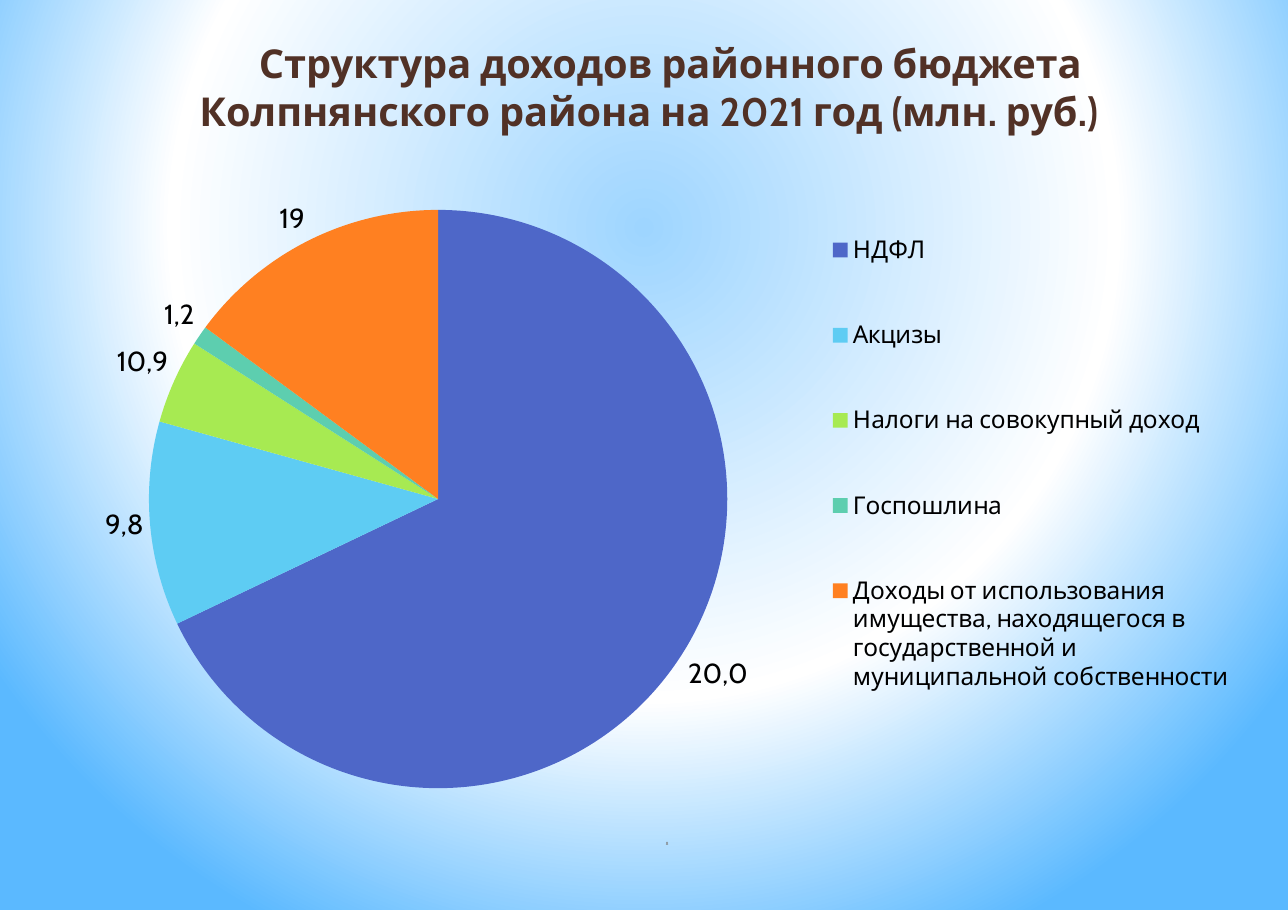
from dataclasses import dataclass

from pptx import Presentation
from pptx.chart.data import CategoryChartData
from pptx.dml.color import RGBColor
from pptx.enum.chart import XL_CHART_TYPE, XL_LABEL_POSITION, XL_LEGEND_POSITION
from pptx.enum.text import MSO_ANCHOR, MSO_AUTO_SIZE, PP_ALIGN
from pptx.oxml import parse_xml
from pptx.oxml.ns import nsdecls, qn
from pptx.util import Pt

PIE = XL_CHART_TYPE.PIE
OUTSIDE_END = XL_LABEL_POSITION.OUTSIDE_END
LEGEND_RIGHT = XL_LEGEND_POSITION.RIGHT
TOP, MIDDLE = MSO_ANCHOR.TOP, MSO_ANCHOR.MIDDLE
GROW = MSO_AUTO_SIZE.SHAPE_TO_FIT_TEXT
CENTER = PP_ALIGN.CENTER

COLORS = {
    "title": "513126",
    "page_number": "808080",
    "label": "000000",
    "sky": "9ED5FF",
    "glow": "FFFFFF",
    "edge": "5BB9FF",
    "income_tax": "4E67C8",
    "excise": "5ECCF3",
    "total_income": "A7EA52",
    "duty": "5DCEAF",
    "property": "FF8021",
}
BACKGROUND_STOPS = {"sky": 0, "glow": 60, "edge": 100}
CHART_BOX = (33.84, 111.6, 779.76, 414)
PIE_BOX = (63.5, 25.6, 378, 378)
LEGEND_BOX = (503.5, 5.5, 273, 371.5)


@dataclass(frozen=True)
class Caption:
    text: str
    box: tuple[float, float, float, float]
    size: float
    font: str
    color: str
    anchor: MSO_ANCHOR
    margin: float
    indent: float
    spacing: int


@dataclass(frozen=True)
class Income:
    name: str
    value: float
    label: str
    color: str


CAPTIONS = [
    Caption("Структура доходов районного бюджета Колпнянского района на 2021 год (млн. руб.)",
            (54.72, 25.4, 738, 63.36), 26, "Cabin", "title", TOP, 0.72, 28.08, -5),
    Caption("8", (350.64, 549.36, 168.48, 3.6), 3, "Arial", "page_number", MIDDLE, 2.16, 0, 0),
]
INCOMES = [
    Income("НДФЛ", 82.1, "20,0", "income_tax"),
    Income("Акцизы", 13.8, "9,8", "excise"),
    Income("Налоги на совокупный доход", 5.7, "10,9", "total_income"),
    Income("Госпошлина", 1.3, "1,2", "duty"),
    Income("Доходы от использования имущества, находящегося в "
           "государственной и муниципальной собственности", 18, "19", "property"),
]


def rgb(color: str) -> RGBColor:
    return RGBColor.from_string(COLORS[color])


def set_format(target, values: dict) -> None:
    for attribute, value in values.items():
        setattr(target, attribute, value)


def set_font(font, size: float, name: str, color: str, bold: bool = False) -> None:
    set_format(font, {"size": Pt(size), "name": name, "bold": bold})
    font.color.rgb = rgb(color)


def paint_background(slide) -> None:
    stops = "".join(
        f'<a:gs pos="{position * 1000}"><a:srgbClr val="{COLORS[color]}"/></a:gs>'
        for color, position in BACKGROUND_STOPS.items())
    background = parse_xml(
        f'<p:bg {nsdecls("p", "a")}><p:bgPr><a:gradFill rotWithShape="1">'
        f'<a:gsLst>{stops}</a:gsLst><a:path path="circle">'
        '<a:fillToRect l="20000" t="10000" r="20000" b="60000"/></a:path>'
        '</a:gradFill><a:effectLst/></p:bgPr></p:bg>')
    slide.element.cSld.insert(0, background)


def add_caption(slide, caption: Caption) -> None:
    frame = slide.shapes.add_textbox(*map(Pt, caption.box)).text_frame
    set_format(frame, {
        "word_wrap": True, "auto_size": GROW, "vertical_anchor": caption.anchor,
        "margin_left": 0, "margin_top": 0, "margin_right": 0, "margin_bottom": 0,
    })
    paragraph = frame.paragraphs[0]
    paragraph.alignment = CENTER
    properties = paragraph._p.get_or_add_pPr()
    properties.set("marL", str(Pt(caption.margin)))
    properties.set("indent", str(Pt(caption.indent)))
    run = paragraph.add_run()
    run.text = caption.text
    set_font(run.font, caption.size, caption.font, caption.color, True)
    run._r.get_or_add_rPr().set("spc", str(caption.spacing))


def place(element, index: int, box: tuple[float, ...], inner: bool = False) -> None:
    for old_layout in element.findall(qn("c:layout")):
        element.remove(old_layout)
    target = '<c:layoutTarget val="inner"/>' if inner else ""
    modes = "".join(f'<c:{side}Mode val="edge"/>' for side in "xy")
    sizes = "".join(f'<c:{side} val="{length / whole:.4f}"/>'
                    for side, length, whole in zip("xywh", box, CHART_BOX[2:] * 2))
    element.insert(index, parse_xml(
        f'<c:layout {nsdecls("c")}><c:manualLayout>{target}{modes}{sizes}'
        '</c:manualLayout></c:layout>'))


def add_income_chart(slide) -> None:
    data = CategoryChartData(number_format="0.0")
    data.categories = [income.name for income in INCOMES]
    data.add_series("Series 1", [income.value for income in INCOMES])
    chart = slide.shapes.add_chart(PIE, *map(Pt, CHART_BOX), data).chart
    set_format(chart, {"has_title": False, "has_legend": True})
    set_font(chart.font, 18, "Cabin", "label")
    set_format(chart.legend, {"position": LEGEND_RIGHT, "include_in_layout": False})
    set_font(chart.legend.font, 16, "Cabin", "label")

    chart.plots[0].vary_by_categories = True
    series = chart.plots[0].series[0]
    set_format(series.data_labels, {
        "show_value": True, "show_percentage": False, "position": OUTSIDE_END,
        "number_format": "0.0", "number_format_is_linked": False,
    })
    for index, income in enumerate(INCOMES):
        point = series.points[index]
        point.format.fill.solid()
        point.format.fill.fore_color.rgb = rgb(income.color)
        point.format.line.fill.background()
        run = point.data_label.text_frame.paragraphs[0].add_run()
        run.text = income.label
        set_font(run.font, 18, "Cabin", "label")
        point.data_label.position = OUTSIDE_END

    plot_area = chart.element.find(f'.//{qn("c:plotArea")}')
    legend = chart.element.find(f'.//{qn("c:legend")}')
    place(plot_area, 0, PIE_BOX, True)
    place(legend, 1, LEGEND_BOX)


def main() -> None:
    presentation = Presentation()
    set_format(presentation, {"slide_width": Pt(841.68), "slide_height": Pt(594.72)})
    slide = presentation.slides.add_slide(presentation.slide_layouts[6])
    paint_background(slide)
    for caption in CAPTIONS:
        add_caption(slide, caption)
    add_income_chart(slide)
    presentation.save("out.pptx")


if __name__ == "__main__":
    main()
